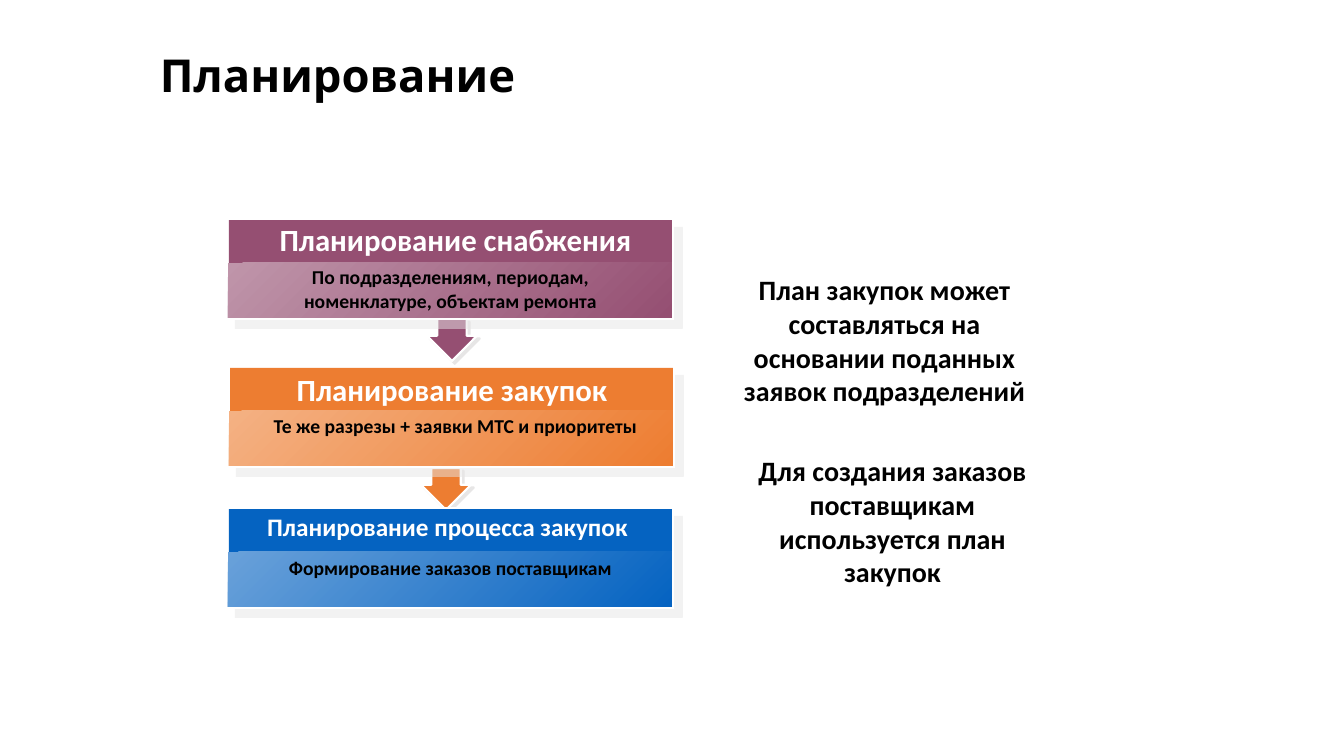
"""Build the planning slide: three linked procurement stages and two notes."""
from lxml import etree
from pptx import Presentation
from pptx.dml.color import RGBColor
from pptx.enum.shapes import MSO_SHAPE
from pptx.enum.text import MSO_ANCHOR, PP_ALIGN
from pptx.oxml.ns import qn
from pptx.util import Pt

RECT, DOWN_ARROW = MSO_SHAPE.RECTANGLE, MSO_SHAPE.DOWN_ARROW
LEFT, CENTER = PP_ALIGN.LEFT, PP_ALIGN.CENTER
MIDDLE = MSO_ANCHOR.MIDDLE

THEME = {
    "title_font": "Karla", "font": "Calibri",
    "title": 32.4, "note": 20, "detail": 14,
    "white": "FFFFFF", "black": "000000", "shadow": "E7E6E6",
    "purple": ("954F72", "BF95AA"),
    "orange": ("ED7D31", "F4B183"),
    "blue": ("0563C1", "69A1DA"),
}

TITLE = ("Планирование", (150, 46, 1082, 64))
STAGES = [
    {"at": (227, 219), "color": "purple",
     "head": ("Планирование снабжения", 22, (239, 216, 433, 47)),
     "detail": ("По подразделениям, периодам, номенклатуре, объектам ремонта",
                (269, 260, 363, 57))},
    {"at": (228, 367), "color": "orange",
     "head": ("Планирование закупок", 22, (231, 366, 442, 47)),
     "detail": ("Те же разрезы + заявки МТС и приоритеты", (239, 409, 433, 34))},
    {"at": (227, 508), "color": "blue",
     "head": ("Планирование процесса закупок", 18, (223, 506, 449, 40)),
     "detail": ("Формирование заказов поставщикам", (269, 551, 363, 34))},
]
ARROWS = [("purple", (427, 319, 50, 42)), ("orange", (421, 468, 50, 42))]
NOTES = [
    ("План закупок может составляться на основании поданных заявок подразделений",
     (712, 268, 345, 146)),
    ("Для создания заказов поставщикам используется план закупок",
     (720, 449, 345, 146)),
]
PANEL, HEAD, BODY = (0, 0, 447, 101), (2, 1, 443, 46), (1, 44, 444, 55)
NOTE_INSET = 20


def px(n):
    return round(n * 914400 / 100.8)


def rgb(value):
    return RGBColor.from_string(value)


def add_shape(shapes, kind, box, fill, line=None, fade=None):
    sp = shapes.add_shape(kind, *map(px, box))
    sp.shadow.inherit = False
    if fade:
        sp.fill.gradient()
        sp.fill.gradient_angle = 315
        for stop, color, position in zip(sp.fill.gradient_stops, (fade, fill), (0, 1)):
            stop.color.rgb = rgb(color)
            stop.position = position
    else:
        sp.fill.solid()
        sp.fill.fore_color.rgb = rgb(fill)
    if line:
        sp.line.color.rgb = rgb(THEME["white"])
        sp.line.width = Pt(line)
    else:
        sp.line.fill.background()
    return sp


def add_shadow(sp, distance, alpha):
    effects = sp._element.spPr.find(qn("a:effectLst"))
    outer = etree.SubElement(effects, qn("a:outerShdw"), dist=str(Pt(distance)),
                             dir=str(45 * 60000), algn="ctr", rotWithShape="0")
    color = etree.SubElement(outer, qn("a:srgbClr"), val=THEME["shadow"])
    etree.SubElement(color, qn("a:alpha"), val=str(alpha * 1000))


def add_text(shapes, text, box, size, color="black", font="font", align=CENTER):
    tb = shapes.add_textbox(*map(px, box))
    tf = tb.text_frame
    tf.word_wrap = True
    p = tf.paragraphs[0]
    p.text = text
    p.alignment = align
    p.font.name = THEME[font]
    p.font.size = Pt(size)
    p.font.bold = True
    p.font.color.rgb = rgb(THEME[color])
    return tf


def add_stage(s, stage):
    x, y = stage["at"]
    panel, head, body = [(x + dx, y + dy, w, h) for dx, dy, w, h in (PANEL, HEAD, BODY)]
    dark, light = THEME[stage["color"]]
    shapes = s.shapes.add_group_shape().shapes
    add_shadow(add_shape(shapes, RECT, panel, THEME["white"], 0.75), 8.5, 50)
    add_shape(shapes, RECT, head, dark)
    add_shape(shapes, RECT, body, dark, fade=light)
    text, size, box = stage["head"]
    add_text(shapes, text, box, size, "white")
    add_text(shapes, *stage["detail"], THEME["detail"])


def main():
    prs = Presentation()
    prs.slide_width, prs.slide_height = px(1344), px(756)
    s = prs.slides.add_slide(prs.slide_layouts[6])

    tf = add_text(s.shapes, *TITLE, THEME["title"], font="title_font", align=LEFT)
    tf.vertical_anchor = MIDDLE
    tf.paragraphs[0].line_spacing = 0.9

    for color, box in ARROWS:
        sp = add_shape(s.shapes, DOWN_ARROW, box, THEME[color][0], 1.5)
        sp.adjustments[0], sp.adjustments[1] = 0.59, 0.6
        add_shadow(sp, 2.8, 100)
    for stage in STAGES:
        add_stage(s, stage)
    for text, box in NOTES:
        tf = add_text(s.shapes, text, box, THEME["note"])
        tf.margin_left = tf.margin_right = px(NOTE_INSET)

    prs.save("out.pptx")


if __name__ == "__main__":
    main()
